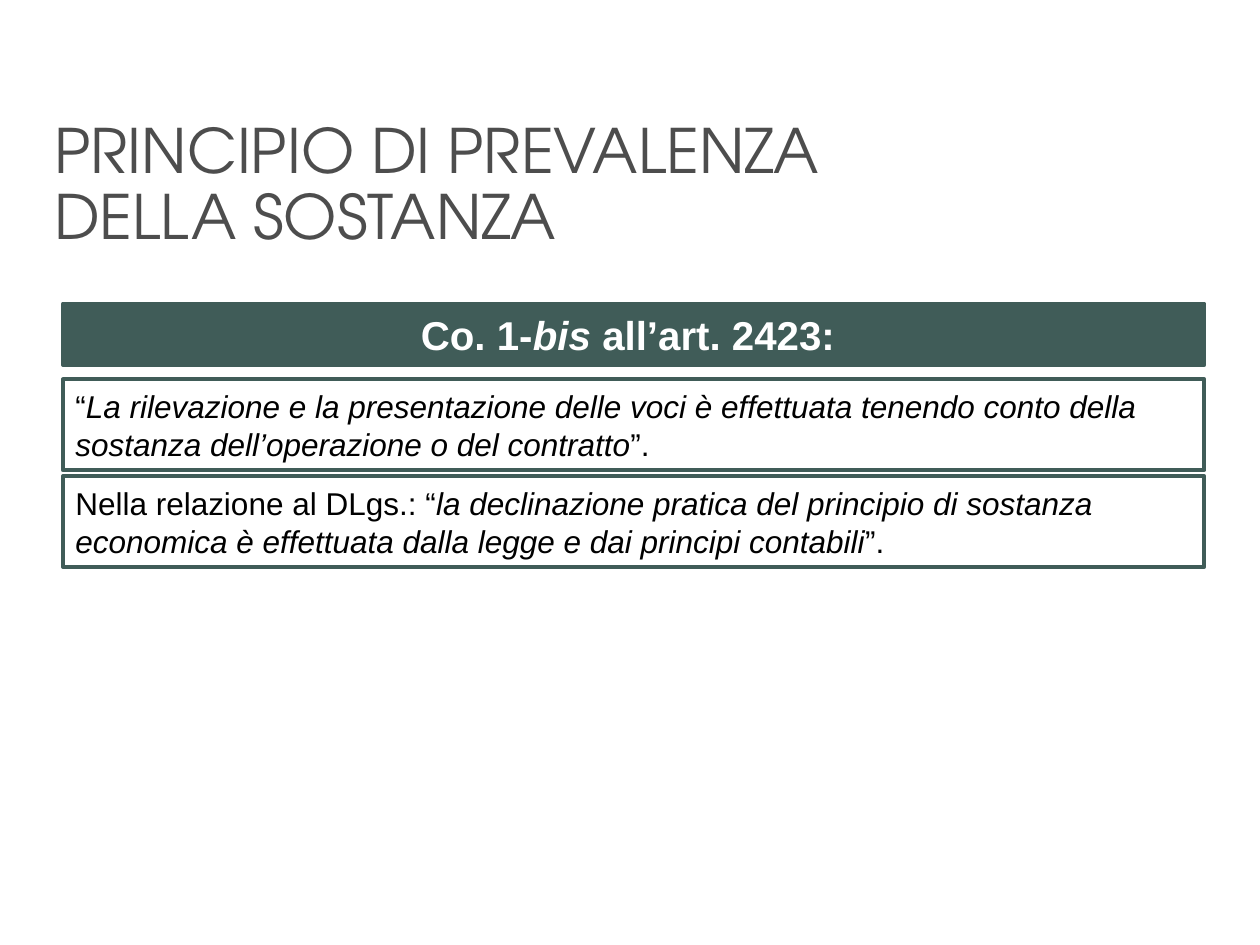
from pptx import Presentation
from pptx.dml.color import RGBColor
from pptx.enum import shapes, text
from pptx.util import Cm, Pt

GREEN = "405C58"
LEFT, WIDTH = 1.27, 23.01


def colour(code):
    return RGBColor.from_string(code)


def write(box, content, size, ink, font="Arial", bold=None, align=text.PP_ALIGN.LEFT,
          anchor=text.MSO_ANCHOR.MIDDLE, spacing=None):
    """Fill a box with one paragraph; *stars* mark italics, newlines break lines."""
    frame = box.text_frame
    frame.word_wrap = True
    frame.vertical_anchor = anchor
    para = frame.paragraphs[0]
    para.alignment = align
    para.line_spacing = spacing
    para.font.size = Pt(size)
    for line_number, line in enumerate(content.split("\n")):
        if line_number:
            para.add_line_break()
        for index, part in enumerate(line.split("*")):
            span = para.add_run()
            span.text = part
            span.font.name = font
            span.font.size = Pt(size)
            span.font.bold = bold
            span.font.italic = index % 2 == 1
            span.font.color.rgb = colour(ink)


def add_title(page, content):
    box = page.shapes.add_textbox(Cm(0.84), Cm(2.31), Cm(23.93), Cm(4.57))
    write(box, content, 35, "4D4D4D", font="TeX Gyre Adventor",
          anchor=text.MSO_ANCHOR.TOP, spacing=0.9)


def add_panel(page, top, height, fill=None):
    box = page.shapes.add_shape(shapes.MSO_SHAPE.RECTANGLE,
                                Cm(LEFT), Cm(top), Cm(WIDTH), Cm(height))
    box.shadow.inherit = False
    if fill:
        box.fill.solid()
        box.fill.fore_color.rgb = colour(fill)
    else:
        box.fill.background()
    box.line.color.rgb = colour(GREEN)
    box.line.width = Pt(2.25)
    return box


def main():
    deck = Presentation()
    deck.slide_width, deck.slide_height = Cm(25.4), Cm(19.05)
    page = deck.slides.add_slide(deck.slide_layouts[6])

    heading = add_panel(page, 6.12, 1.24, fill=GREEN)
    write(heading, "Co. 1-*bis *all’art. 2423: ", 23, "FFFFFF", bold=True,
          align=text.PP_ALIGN.CENTER)
    add_title(page, "PRINCIPIO DI PREVALENZA\nDELLA SOSTANZA")

    quotes = [
        "“*La rilevazione e la presentazione delle voci è effettuata tenendo conto "
        "della sostanza dell’operazione o del contratto*”.",
        "Nella relazione al DLgs.: “*la declinazione pratica del principio di sostanza "
        "economica è effettuata dalla legge e dai principi contabili*”.",
    ]
    for row, quote in enumerate(quotes):
        write(add_panel(page, 7.65 + 1.95 * row, 1.83), quote, 18, "000000")

    deck.save("out.pptx")


if __name__ == "__main__":
    main()
